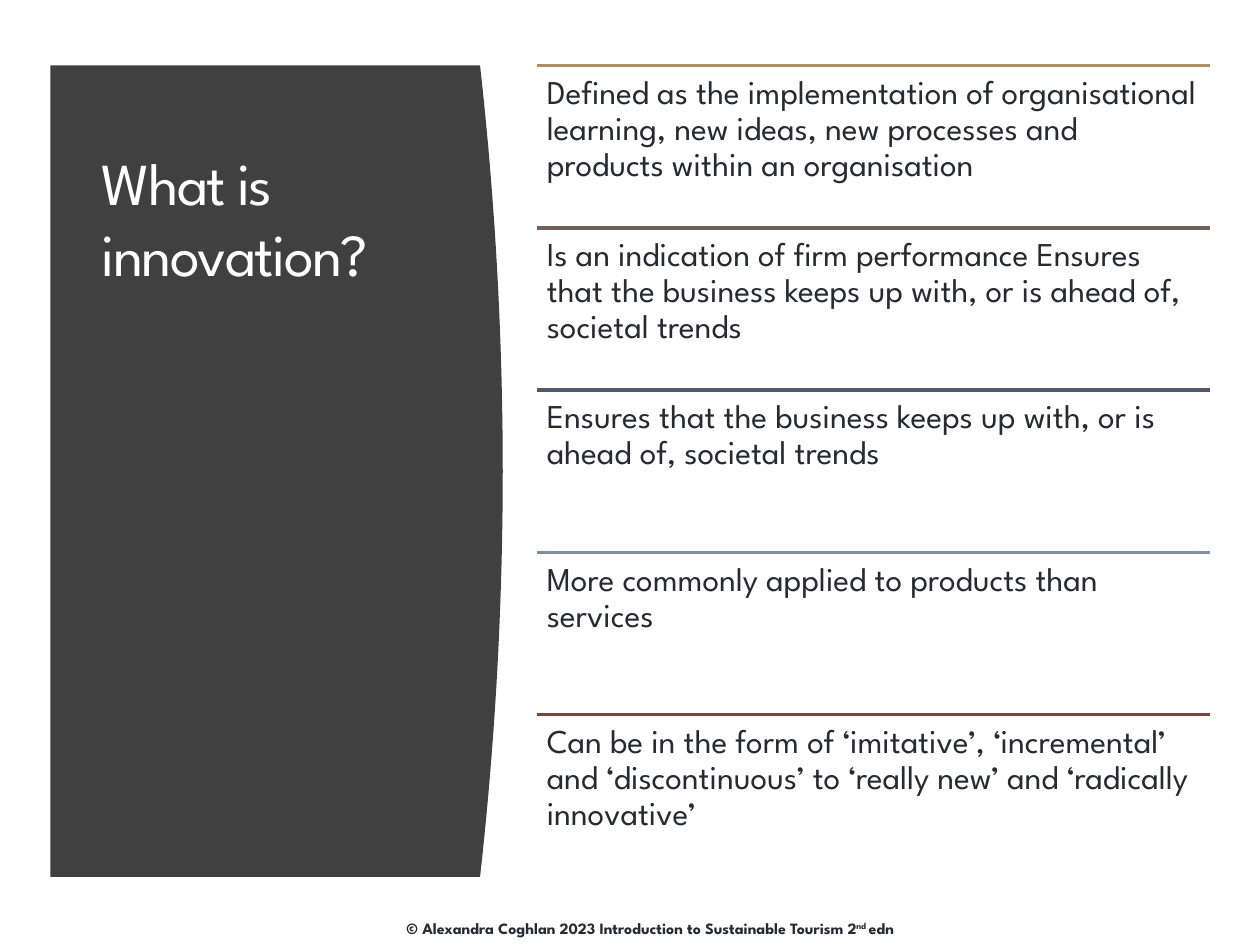
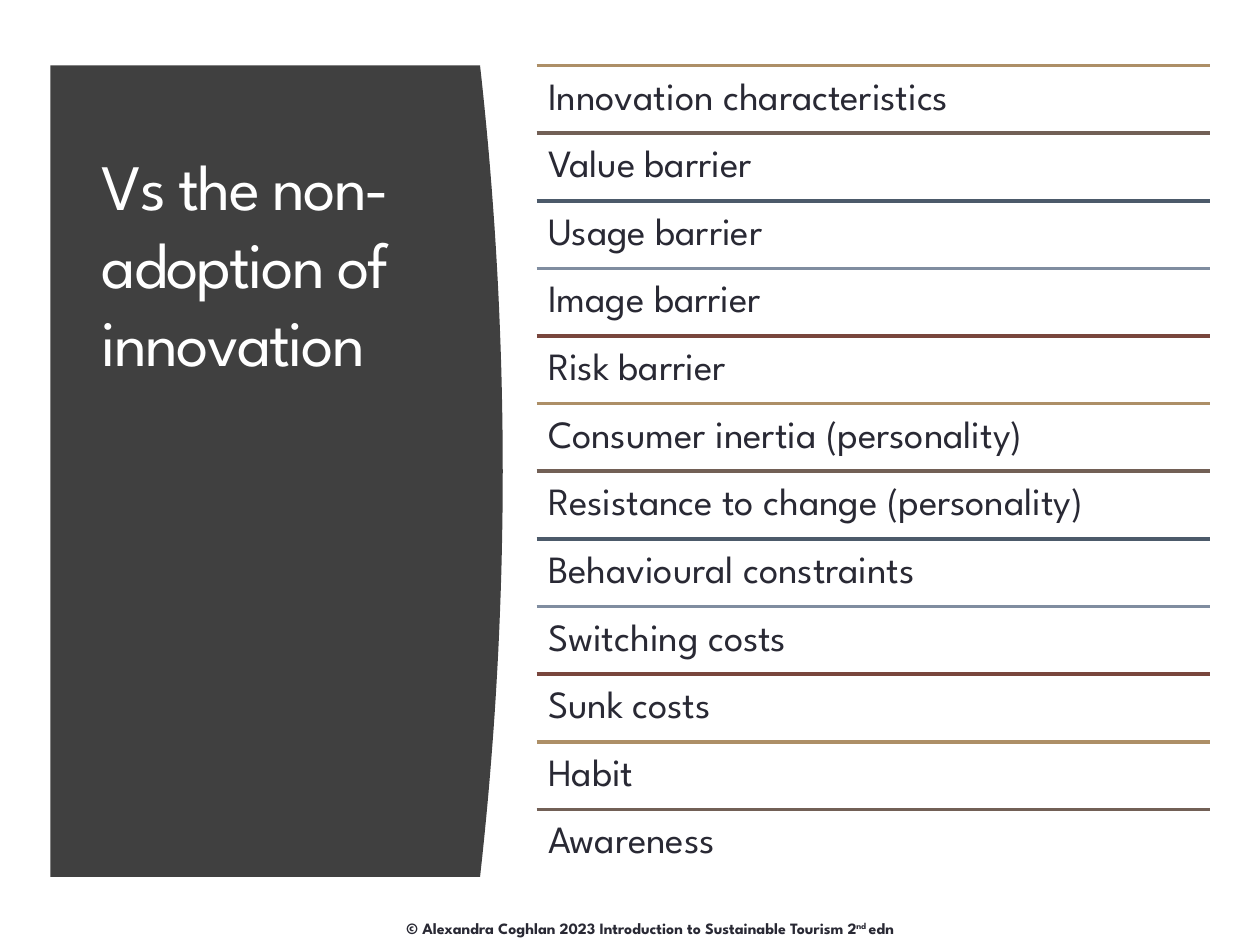
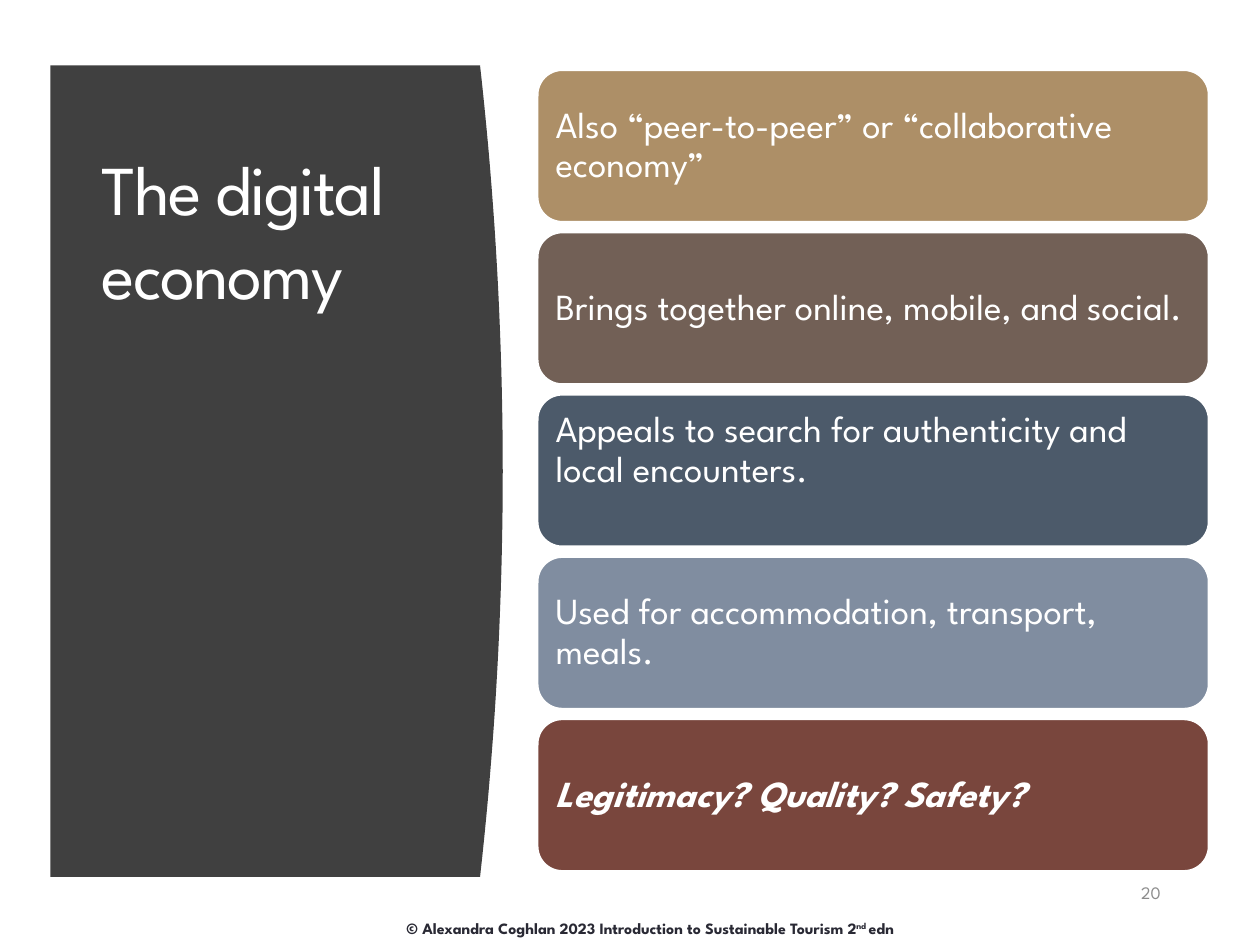
from dataclasses import dataclass
from itertools import cycle

from lxml import etree
from pptx import Presentation
from pptx import util as u
from pptx.dml import color
from pptx.enum import shapes, text
from pptx.oxml import ns


@dataclass(frozen=True)
class Theme:
    font: str = "League Spartan"
    ink: str = "292934"
    panel: str = "404040"
    white: str = "FFFFFF"
    muted: str = "8C8C8C"
    accents: tuple = ("AD8F67", "726056", "4C5A6A", "808DA0", "79463D")
    footer_size: int = 9
    number_size: int = 10
    card_size: int = 21
    rule_width: float = 2.08


BAND_TOP, BAND_HEIGHT = 0.52, 6.44
PANEL_LEFT, PANEL_EDGE, PANEL_BULGE = 0.4, 3.81, 0.18
LIST_LEFT, LIST_WIDTH = 4.26, 5.34
CURVE_STEPS = 40


class Deck:
    def __init__(self, theme):
        self.theme = theme
        self.presentation = Presentation()
        self.presentation.slide_width = u.Inches(10)
        self.presentation.slide_height = u.Inches(7.5)
        self.slide = None

    def rgb(self, value):
        return color.RGBColor.from_string(value)

    def style_run(self, run, size, ink, bold=False, italic=False):
        run.font.name = self.theme.font
        run.font.size = u.Pt(size)
        run.font.color.rgb = self.rgb(ink)
        run.font.bold = bold
        run.font.italic = italic

    def fill_text(self, shape, words, size, ink, inset=None, spacing=None,
                  align=text.PP_ALIGN.LEFT, anchor=text.MSO_ANCHOR.TOP,
                  bold=False, italic=False):
        frame = shape.text_frame
        frame.word_wrap = True
        frame.vertical_anchor = anchor
        if inset is not None:
            frame.margin_left = frame.margin_right = u.Inches(inset)
            frame.margin_top = frame.margin_bottom = u.Inches(inset)
        frame.text = words
        paragraph = frame.paragraphs[0]
        paragraph.alignment = align
        paragraph.line_spacing = spacing
        for run in paragraph.runs:
            self.style_run(run, size, ink, bold, italic)
        return frame

    def box(self, left, top, width, height):
        return self.slide.shapes.add_textbox(
            u.Inches(left), u.Inches(top), u.Inches(width), u.Inches(height))

    def panel(self):
        curve = []
        for step in range(CURVE_STEPS + 1):
            part = step / CURVE_STEPS
            edge = PANEL_EDGE + PANEL_BULGE * (1 - (2 * part - 1) ** 2)
            curve.append((u.Inches(edge), u.Inches(BAND_TOP + BAND_HEIGHT * part)))
        left = u.Inches(PANEL_LEFT)
        builder = self.slide.shapes.build_freeform(left, u.Inches(BAND_TOP))
        builder.add_line_segments(curve + [(left, u.Inches(BAND_TOP + BAND_HEIGHT))])
        panel = builder.convert_to_shape()
        panel.shadow.inherit = False
        panel.fill.solid()
        panel.fill.fore_color.rgb = self.rgb(self.theme.panel)
        panel.line.fill.background()

    def title(self, words, size):
        frame = self.fill_text(self.box(0.71, 1.11, 2.8, 5.24), words, size,
                               self.theme.white)
        for run in frame.paragraphs[0].runs:
            run._r.get_or_add_rPr().set("spc", "-100")

    def footer(self):
        frame = self.fill_text(
            self.box(2.8, 7.24, 4.72, 0.25),
            "© Alexandra Coghlan 2023 Introduction to Sustainable Tourism 2",
            self.theme.footer_size, self.theme.ink,
            align=text.PP_ALIGN.CENTER, bold=True)
        frame.auto_size = text.MSO_AUTO_SIZE.SHAPE_TO_FIT_TEXT
        for words, baseline in (("nd ", "30000"), ("edn", "0")):
            run = frame.paragraphs[0].add_run()
            run.text = words
            self.style_run(run, self.theme.footer_size, self.theme.ink, bold=True)
            run._r.get_or_add_rPr().set("baseline", baseline)

    def page_number(self, number):
        self.fill_text(self.box(8.8, 6.95, 0.51, 0.4), str(number),
                       self.theme.number_size, self.theme.muted,
                       align=text.PP_ALIGN.RIGHT)

    def start_slide(self, title, size):
        self.slide = self.presentation.slides.add_slide(
            self.presentation.slide_layouts[6])
        self.footer()
        self.panel()
        self.title(title, size)

    def rule(self, top, accent):
        line = self.slide.shapes.add_connector(
            shapes.MSO_CONNECTOR.STRAIGHT, u.Inches(LIST_LEFT), u.Inches(top),
            u.Inches(LIST_LEFT + LIST_WIDTH), u.Inches(top))
        line.line.color.rgb = self.rgb(accent)
        line.line.width = u.Pt(self.theme.rule_width)
        etree.SubElement(line._element.spPr, ns.qn("a:effectLst"))

    def ruled_list(self, items, size, inset):
        pitch = BAND_HEIGHT / len(items)
        for index, (words, accent) in enumerate(zip(items, cycle(self.theme.accents))):
            top = BAND_TOP + pitch * index
            self.rule(top, accent)
            self.fill_text(self.box(LIST_LEFT, top, LIST_WIDTH, pitch), words, size,
                           self.theme.ink, inset=inset, spacing=0.9)

    def card(self, top, height, words, accent, emphasis=False):
        card = self.slide.shapes.add_shape(
            shapes.MSO_SHAPE.ROUNDED_RECTANGLE, u.Inches(LIST_LEFT), u.Inches(top),
            u.Inches(LIST_WIDTH), u.Inches(height))
        card.shadow.inherit = False
        card.fill.solid()
        card.fill.fore_color.rgb = self.rgb(accent)
        card.line.color.rgb = self.rgb(self.theme.white)
        card.line.width = u.Pt(self.theme.rule_width)
        return self.fill_text(card, words, self.theme.card_size, self.theme.white,
                              inset=0.09, spacing=0.9, anchor=text.MSO_ANCHOR.MIDDLE,
                              bold=emphasis, italic=emphasis)

    def cards(self, items, emphasised, raised):
        pitch = BAND_HEIGHT / len(items)
        for index, (words, accent) in enumerate(zip(items, cycle(self.theme.accents))):
            frame = self.card(BAND_TOP + 0.03 + pitch * index, pitch - 0.07,
                              words, accent, index == emphasised)
            if index == raised:
                frame.margin_bottom = u.Inches(0.41)


def main():
    deck = Deck(Theme())

    deck.start_slide("What is innovation?", 34)
    deck.ruled_list([
        "Defined as the implementation of organisational learning, new ideas, "
        "new processes and products within an organisation",
        "Is an indication of firm performance Ensures that the business keeps up "
        "with, or is ahead of, societal trends",
        "Ensures that the business keeps up with, or is ahead of, societal trends",
        "More commonly applied to products than services",
        "Can be in the form of ‘imitative’, ‘incremental’ and ‘discontinuous’ to "
        "‘really new’ and ‘radically innovative’",
    ], size=19, inset=0.08)

    deck.start_slide("Vs the non-adoption of innovation", 37)
    deck.ruled_list([
        "Innovation characteristics",
        "Value barrier",
        "Usage barrier",
        "Image barrier",
        "Risk barrier",
        "Consumer inertia (personality)",
        "Resistance to change (personality)",
        "Behavioural constraints",
        "Switching costs",
        "Sunk costs",
        "Habit",
        "Awareness",
    ], size=22, inset=0.09)

    deck.start_slide("The digital economy", 40)
    deck.page_number(20)
    deck.cards([
        "Also “peer-to-peer” or “collaborative economy”",
        "Brings together online, mobile, and social.",
        "Appeals to search for authenticity and local encounters.",
        "Used for accommodation, transport, meals.",
        "Legitimacy? Quality? Safety?",
    ], emphasised=4, raised=2)

    deck.presentation.save("out.pptx")


if __name__ == "__main__":
    main()
